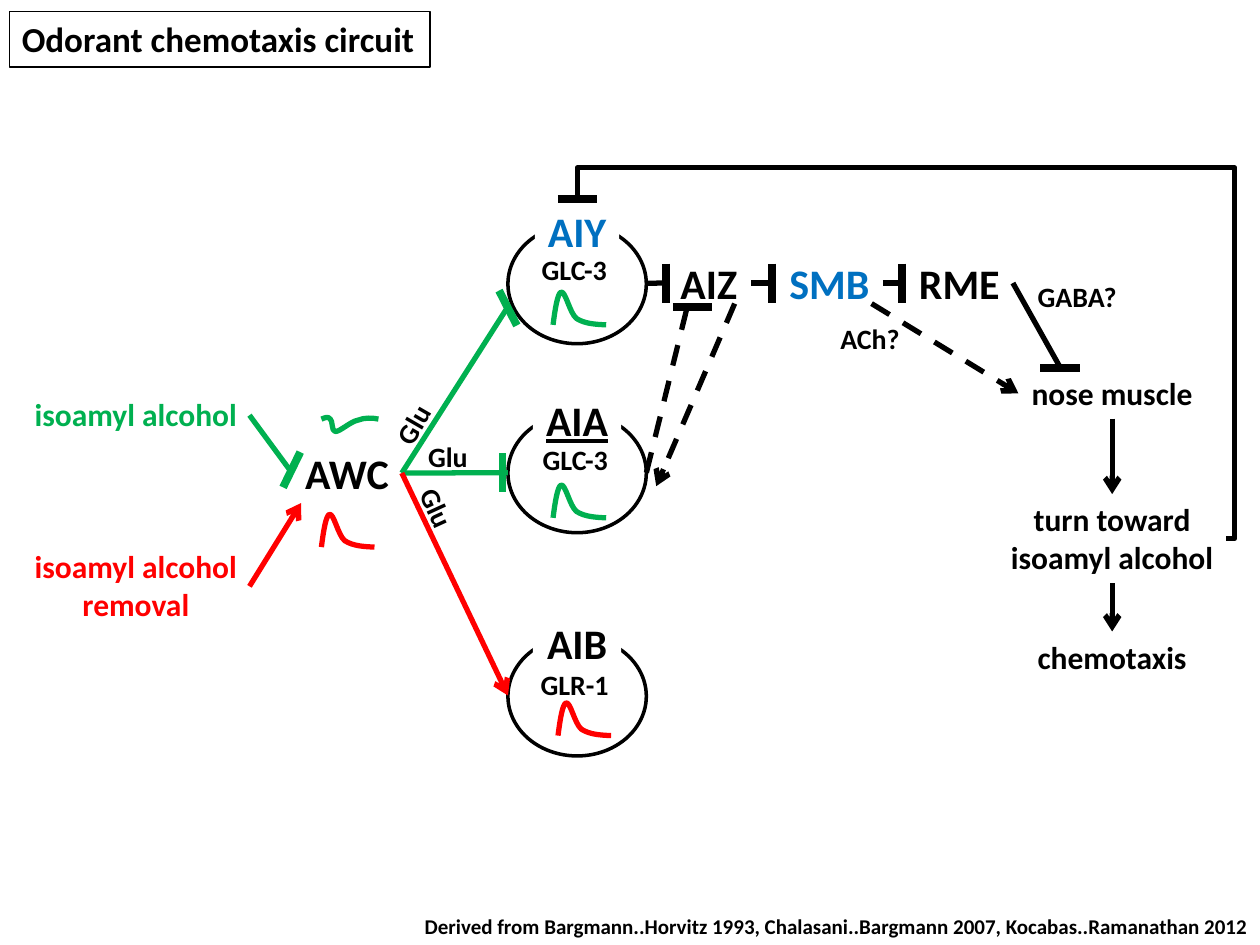
from dataclasses import dataclass
from math import cos, radians, sin
from typing import Any

from lxml.etree import SubElement
from pptx import Presentation
from pptx.dml.color import RGBColor
from pptx.enum.dml import MSO_LINE
from pptx.enum.shapes import MSO_CONNECTOR, MSO_SHAPE
from pptx.enum.text import MSO_AUTO_SIZE, PP_ALIGN
from pptx.oxml.ns import qn
from pptx.util import Cm, Pt

COLORS = {"black": "000000", "white": "FFFFFF", "green": "00B050", "red": "FF0000", "blue": "0070C0"}
TOP, LEFT, BOTTOM, RIGHT = range(4)
BAR_LENGTH = 0.79
SPIKE = [(0, 0.66), (0.04, 0.34), (0.09, 0.03), (0.16, 0), (0.25, -0.03), (0.33, 0.41),
         (0.47, 0.53), (0.64, 0.64), (0.86, 0.65), (1.07, 0.66)]
DIP = [(0, 0.03), (0.08, 0), (0.13, -0.03), (0.18, 0.03), (0.23, 0.05), (0.2, 0.28), (0.28, 0.28),
       (0.38, 0.28), (0.58, 0.08), (0.74, 0.05), (0.86, 0), (1.02, 0), (1.15, 0.03)]


def rgb(name):
    """Return the named palette colour."""
    return RGBColor.from_string(COLORS[name])


def bend_segments(shape):
    """Turn every three line segments of a freeform into one cubic curve."""
    segments = list(shape._element.iter(qn("a:lnTo")))
    for first in range(0, len(segments), 3):
        cubic = SubElement(segments[first].getparent(), qn("a:cubicBezTo"))
        for segment in segments[first:first + 3]:
            cubic.append(segment[0])
            segment.getparent().remove(segment)


@dataclass
class Region:
    """A part of the slide whose contents are placed from its left top corner, in centimetres."""
    shapes: Any
    left: float = 0
    top: float = 0

    def place(self, x, y):
        """Turn a point of the region into slide lengths."""
        return Cm(self.left + x), Cm(self.top + y)

    def text(self, x, y, width, height, words, size, color="black", align=None, fill=None, wrap=False):
        """Add a bold text box, one paragraph for each line of words."""
        shape = self.shapes.add_textbox(*self.place(x, y), Cm(width), Cm(height))
        if fill:
            shape.fill.solid()
            shape.fill.fore_color.rgb = rgb(fill)
        frame = shape.text_frame
        frame.word_wrap = wrap
        frame.auto_size = MSO_AUTO_SIZE.SHAPE_TO_FIT_TEXT
        frame.text = words
        for paragraph in frame.paragraphs:
            paragraph.alignment = align
            font = paragraph.font
            font.name, font.size, font.bold = "Calibri", Pt(size), True
            font.color.rgb = rgb(color)
        return shape

    def label(self, x, y, width, height, words, size=18, color="black", fill=None):
        """Add centred text."""
        return self.text(x, y, width, height, words, size, color, PP_ALIGN.CENTER, fill)

    def line(self, start, end, color="black", width=3, dashed=False, arrow=False,
             begin_at=None, end_at=None, kind=MSO_CONNECTOR.STRAIGHT):
        """Add a connector, joined to the given (shape, side) pairs."""
        connector = self.shapes.add_connector(kind, *self.place(*start), *self.place(*end))
        if begin_at:
            connector.begin_connect(*begin_at)
        if end_at:
            connector.end_connect(*end_at)
        connector.line.color.rgb = rgb(color)
        connector.line.width = Pt(width)
        if dashed:
            connector.line.dash_style = MSO_LINE.DASH
        if arrow:
            SubElement(connector.line._get_or_add_ln(), qn("a:tailEnd"), type="arrow")
        SubElement(connector._element.spPr, qn("a:effectLst"))
        return connector

    def bar(self, x, y, color="black", angle=90):
        """Add the blunt end of an inhibitory link, centred on a point."""
        dx = BAR_LENGTH / 2 * cos(radians(angle))
        dy = BAR_LENGTH / 2 * sin(radians(angle))
        self.line((x - dx, y - dy), (x + dx, y + dy), color, 4.5)

    def curve(self, x, y, controls, color):
        """Add a response trace."""
        points = [self.place(x + px, y + py) for px, py in controls]
        builder = self.shapes.build_freeform(*points[0], scale=1.0)
        builder.add_line_segments(points[1:], close=False)
        shape = builder.convert_to_shape()
        bend_segments(shape)
        shape.shadow.inherit = False
        shape.fill.background()
        shape.line.color.rgb = rgb(color)
        shape.line.width = Pt(3)


def draw_heading(region):
    """Draw the framed title."""
    title = region.text(0, 0, 8.48, 1.12, "Odorant chemotaxis circuit", 20)
    title.line.color.rgb = rgb("black")
    title.line.width = Pt(0.75)


def draw_sensory(region):
    """Draw the stimuli and the sensory neuron, and return the neuron."""
    neuron = region.label(5.46, 1.07, 2.21, 1.27, "AWC", 24, fill="white")
    region.label(0, 0, 4.62, 1.02, "isoamyl alcohol", color="green")
    region.label(0, 3.08, 4.62, 1.8, "isoamyl alcohol\nremoval", color="red")
    region.line((4.6, 0.54), (5.46, 1.71), "green")
    region.bar(5.45, 1.64, "green", 116)
    region.line((4.6, 3.99), (5.64, 2.31), "red", arrow=True)
    region.curve(6.05, 0.59, DIP, "green")
    region.curve(6.05, 2.54, SPIKE, "red")
    return neuron


def draw_interneuron(region, name, receptor, receptor_at, trace_at, trace_color,
                     name_color="black", name_width=1.78):
    """Draw an open circle with a neuron's name, receptor and response."""
    cell = Region(region.shapes.add_group_shape().shapes, region.left, region.top)
    circle = cell.shapes.add_shape(MSO_SHAPE.OVAL, *cell.place(0, 0), Cm(2.79), Cm(2.41))
    circle.shadow.inherit = False
    circle.fill.solid()
    circle.fill.fore_color.rgb = rgb("white")
    circle.line.color.rgb = rgb("black")
    circle.line.width = Pt(2)
    title = cell.label((2.79 - name_width) / 2, -0.5, name_width, 1.27, name, 24, name_color, "white")
    region.text(*receptor_at, 1.88, 0.94, receptor, 16)
    region.curve(*trace_at, SPIKE, trace_color)
    return title


def draw_glutamate_links(region, source):
    """Draw the three links that leave the sensory neuron."""
    start = {"start": (0, 0), "begin_at": (source, RIGHT)}
    region.line(end=(2.14, 0), color="green", **start)
    region.bar(2.03, 0, "green")
    region.line(end=(2.11, -3.3), color="green", **start)
    region.bar(2.14, -3.32, "green", 63)
    region.line(end=(2.14, 4.49), color="red", arrow=True, **start)
    for x, y, rotation in ((-0.43, -1.45, 300), (0.28, -0.79, 0), (0.05, 0.25, 65.4)):
        region.text(x, y, 1.32, 0.94, "Glu", 16).rotation = rotation


def draw_chain(region):
    """Draw the row of inhibiting neurons and return the last one."""
    previous = None
    for name, x, width, color, bar_x in (("AIZ", 0.41, 1.7, "black", 0.4), ("SMB", 2.61, 2.16, "blue", 2.54),
                                         ("RME", 5.23, 2.16, "black", 5.16)):
        neuron = region.label(x, 0, width, 1.27, name, 24, color, "white")
        region.line((0, 0.64), (x, 0.64), begin_at=previous, end_at=(neuron, LEFT))
        region.bar(bar_x, 0.64)
        previous = (neuron, RIGHT)
    region.line((0, 4.46), (0.84, 1.05), dashed=True)
    region.bar(0.93, 1.12, angle=0)
    region.line((1.78, 1.05), (0.2, 4.73), dashed=True, arrow=True)
    region.text(3.66, 1.28, 1.73, 0.94, "ACh?", 16)
    region.text(7.64, 0.44, 2.13, 0.94, "GABA?", 16)
    return neuron


def draw_motor_output(region, motor_neuron):
    """Draw the column of behaviour and the links that reach its top."""
    steps = [region.label(0.42, 0, 3.78, 1.02, "nose muscle"),
             region.label(0, 2.54, 4.62, 1.8, "turn toward\nisoamyl alcohol"),
             region.label(0.55, 5.31, 3.52, 1.02, "chemotaxis")]
    for above, below in zip(steps, steps[1:]):
        region.line((2.31, 0), (2.31, 1), arrow=True, begin_at=(above, BOTTOM), end_at=(below, TOP))
    region.line((-2.54, -1.3), (0.42, 0.51), dashed=True, arrow=True, end_at=(steps[0], LEFT))
    region.line((0.3, -1.7), (1.27, 0), begin_at=(motor_neuron, RIGHT))
    region.bar(1.26, 0, angle=0)


def draw_feedback(region):
    """Draw the inhibiting loop from behaviour back to the first interneuron."""
    loop = region.line((13.08, 6.84), (0, 0), kind=MSO_CONNECTOR.ELBOW)
    geometry = loop._element.spPr.find(qn("a:prstGeom"))
    geometry.set("prst", "bentConnector4")
    guides = geometry.find(qn("a:avLst"))
    for name, value in (("adj1", -1350), ("adj2", 109300)):
        SubElement(guides, qn("a:gd"), name=name, fmla=f"val {value}")
    region.bar(0, 0, angle=0)


def main():
    """Build the slide."""
    presentation = Presentation()
    presentation.slide_width, presentation.slide_height = Cm(25.4), Cm(19.05)
    shapes = presentation.slides.add_slide(presentation.slide_layouts[6]).shapes
    draw_heading(Region(shapes, 0.19, 0.23))
    sensory_neuron = draw_sensory(Region(shapes, 0.43, 7.83))
    draw_interneuron(Region(shapes, 10.24, 4.52), "AIY", "GLC-3", (0.43, 0.45), (0.91, 1.37),
                     "green", "blue", 1.7)
    underlined = draw_interneuron(Region(shapes, 10.24, 8.33), "AIA", "GLC-3", (0.45, 0.46),
                                  (0.91, 1.45), "green")
    underlined.text_frame.paragraphs[0].font.underline = True
    draw_interneuron(Region(shapes, 10.24, 12.83), "AIB", "GLR-1", (0.41, 0.5), (1.01, 1.34), "red")
    draw_glutamate_links(Region(shapes, 8.1, 9.53), sensory_neuron)
    motor_neuron = draw_chain(Region(shapes, 13.03, 5.07))
    draw_motor_output(Region(shapes, 20.11, 7.42), motor_neuron)
    draw_feedback(Region(shapes, 11.64, 4.02))
    Region(shapes, 7.07, 18.29).text(
        0, 0, 18.34, 0.76, "Derived from Bargmann..Horvitz 1993, Chalasani..Bargmann 2007, Kocabas..Ramanathan 2012",
        12, align=PP_ALIGN.RIGHT, wrap=True)
    presentation.save("out.pptx")


if __name__ == "__main__":
    main()
